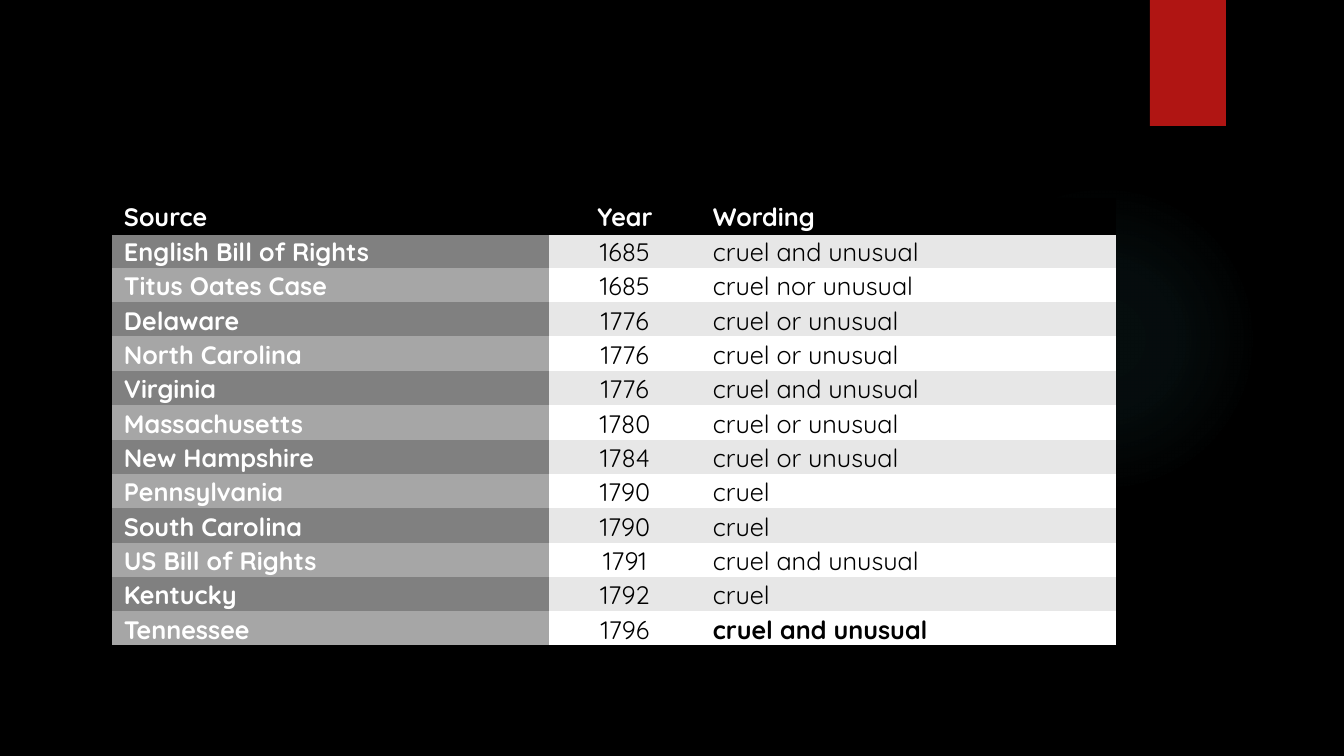
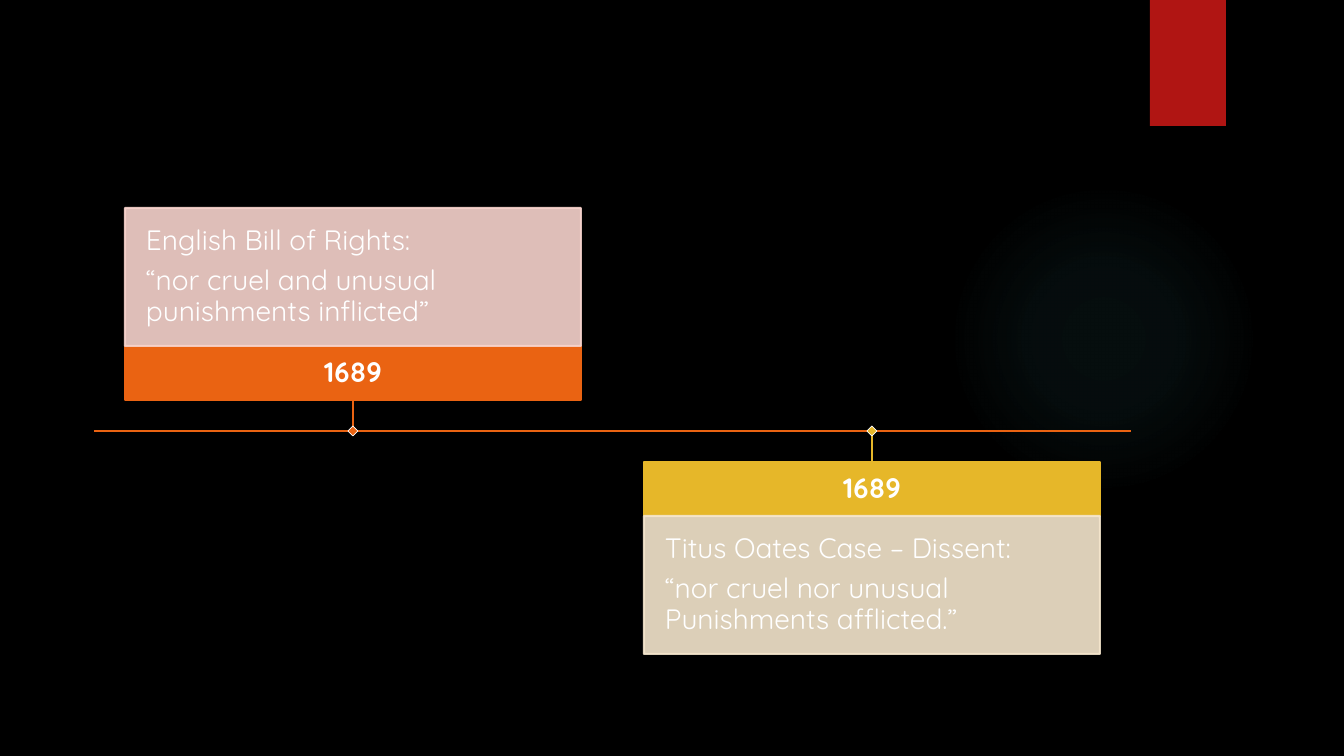
"""Build two slides on the wording of early punishment clauses."""
import dataclasses

import lxml.etree
import pptx
import pptx.dml.color
import pptx.enum.shapes
import pptx.enum.text
import pptx.oxml.ns
import pptx.util

SHAPE = pptx.enum.shapes.MSO_SHAPE
ANCHOR = pptx.enum.text.MSO_ANCHOR
ALIGN = pptx.enum.text.PP_ALIGN
SubElement = lxml.etree.SubElement
qn = pptx.oxml.ns.qn


@dataclasses.dataclass(frozen=True)
class Theme:
    font: str = "Quicksand"
    table_size: int = 18
    timeline_size: int = 20
    black: str = "000000"
    white: str = "FFFFFF"
    ribbon: str = "B01513"
    glow: str = "50B9C1"
    orange: str = "EA6312"
    orange_tint: str = "F7D3CC"
    gold: str = "E6B729"
    gold_tint: str = "F5E6CD"
    source_fills: tuple = ("808080", "A6A6A6")
    detail_fills: tuple = ("E7E7E7", "FFFFFF")


THEME = Theme()
SLIDE_SIZE = (1344, 756)
EMU_PER_PX = 12192000 / SLIDE_SIZE[0]
PLAIN_TABLE_STYLE = "{2D5ABB26-0587-4C30-8999-92F81FD0307C}"

GLOW_BOX = (949, 184, 310, 310)
GLOW_STOPS = [(0, 7), (36, 6), (69, 0)]
RIBBON_BOX = (1150, 0, 76, 126)

CLAUSE_BOX = (112, 199, 1004, 447)
CLAUSE_COLUMNS = (437, 152, 415)
CLAUSES = [
    ("Source", "Year", "Wording"),
    ("English Bill of Rights", "1685", "cruel and unusual"),
    ("Titus Oates Case", "1685", "cruel nor unusual"),
    ("Delaware", "1776", "cruel or unusual"),
    ("North Carolina", "1776", "cruel or unusual"),
    ("Virginia", "1776", "cruel and unusual"),
    ("Massachusetts", "1780", "cruel or unusual"),
    ("New Hampshire", "1784", "cruel or unusual"),
    ("Pennsylvania", "1790", "cruel"),
    ("South Carolina", "1790", "cruel"),
    ("US Bill of Rights", "1791", "cruel and unusual"),
    ("Kentucky", "1792", "cruel"),
    ("Tennessee", "1796", "cruel and unusual"),
]

AXIS_LEFT, AXIS_RIGHT, AXIS_Y = 94, 1131, 431
EVENT_WIDTH, YEAR_HEIGHT, QUOTE_HEIGHT = 456, 54, 138
STEM_HEIGHT, MARKER_SIZE = 31, 10
EVENTS = [
    dict(center=353, above=True, year="1689", color=THEME.orange, tint=THEME.orange_tint,
         quote="English Bill of Rights:\n“nor cruel and unusual punishments inflicted”"),
    dict(center=872, above=False, year="1689", color=THEME.gold, tint=THEME.gold_tint,
         quote="Titus Oates Case – Dissent:\n“nor cruel nor unusual Punishments afflicted.”"),
]


def px(length):
    return pptx.util.Emu(round(length * EMU_PER_PX))


def paint(fill, color):
    fill.solid()
    fill.fore_color.rgb = pptx.dml.color.RGBColor.from_string(color)


def stroke(line, color, width):
    paint(line.fill, color)
    line.width = pptx.util.Pt(width)


def add_block(slide, kind, box, fill, outline=None, width=1.5):
    block = slide.shapes.add_shape(kind, *map(px, box))
    block.shadow.inherit = False
    paint(block.fill, fill)
    if outline:
        stroke(block.line, outline, width)
    else:
        block.line.fill.background()
    return block


def add_line(slide, start, end, color, width):
    line = slide.shapes.add_connector(
        pptx.enum.shapes.MSO_CONNECTOR.STRAIGHT, *map(px, start + end))
    stroke(line.line, color, width)
    SubElement(line.element.spPr, qn("a:effectLst"))
    return line


def style_text(frame, size, color, bold, align, line_spacing, space_after=0):
    for paragraph in frame.paragraphs:
        paragraph.alignment = align
        paragraph.line_spacing = line_spacing
        paragraph.space_after = pptx.util.Pt(space_after)
        for run in paragraph.runs:
            run.font.name = THEME.font
            run.font.size = pptx.util.Pt(size)
            run.font.bold = bold
            run.font.color.rgb = pptx.dml.color.RGBColor.from_string(color)


def write_event(block, text, inset, bold, align):
    frame = block.text_frame
    frame.text = text
    frame.word_wrap = True
    frame.vertical_anchor = ANCHOR.MIDDLE
    frame.margin_left = frame.margin_right = px(inset)
    frame.margin_top = frame.margin_bottom = px(inset)
    style_text(frame, THEME.timeline_size, THEME.white, bold, align, 0.9, 7)


def make_translucent(block, percent):
    for color in block.element.iter(qn("a:srgbClr")):
        SubElement(color, qn("a:alpha"), val=str(percent * 1000))


def fill_glow(glow):
    glow.fill.gradient()
    gradient = next(glow.element.iter(qn("a:gradFill")))
    gradient.clear()
    stops = SubElement(gradient, qn("a:gsLst"))
    for position, opacity in GLOW_STOPS:
        stop = SubElement(stops, qn("a:gs"), pos=str(position * 1000))
        color = SubElement(stop, qn("a:srgbClr"), val=THEME.glow)
        SubElement(color, qn("a:alpha"), val=str(opacity * 1000))
    circle = SubElement(gradient, qn("a:path"), path="circle")
    SubElement(circle, qn("a:fillToRect"), l="50000", t="50000", r="50000", b="50000")


def decorate_layout(layout, slide):
    paint(layout.background.fill, THEME.black)
    glow = add_block(slide, SHAPE.OVAL, GLOW_BOX, THEME.glow)
    fill_glow(glow)
    ribbon = add_block(slide, SHAPE.RECTANGLE, RIBBON_BOX, THEME.ribbon)
    for decoration in (glow, ribbon):
        layout.shapes.element.append(decoration.element)


def add_rules(cell, sides):
    properties = cell.fill and next(cell.text_frame._txBody.getparent().iter(qn("a:tcPr")))
    for index, side in enumerate(sides):
        rule = lxml.etree.Element(qn(f"a:ln{side}"), w=str(pptx.util.Pt(2)))
        color = SubElement(rule, qn("a:solidFill"))
        SubElement(color, qn("a:srgbClr"), val=THEME.black)
        properties.insert(index, rule)


def format_clause(cell, text, row, column):
    is_header, is_last = row == 0, row == len(CLAUSES) - 1
    is_source = column == 0
    fills = THEME.source_fills if is_source else THEME.detail_fills
    cell.text = text
    cell.vertical_anchor = ANCHOR.BOTTOM
    cell.margin_left = cell.margin_right = px(12)
    cell.margin_top = cell.margin_bottom = 0
    paint(cell.fill, THEME.black if is_header else fills[(row - 1) % 2])
    style_text(
        cell.text_frame, THEME.table_size,
        THEME.white if is_header or is_source else THEME.black,
        is_header or is_source or (is_last and column == 2),
        ALIGN.CENTER if column == 1 else ALIGN.LEFT, 1.07)
    if is_header or is_last:
        add_rules(cell, "TB" if is_header else "B")


def build_clauses(slide):
    frame = slide.shapes.add_table(
        len(CLAUSES), len(CLAUSE_COLUMNS), *map(px, CLAUSE_BOX))
    next(frame.element.iter(qn("a:tableStyleId"))).text = PLAIN_TABLE_STYLE
    clauses = frame.table
    for column, width in zip(clauses.columns, CLAUSE_COLUMNS):
        column.width = px(width)
    for row, texts in enumerate(CLAUSES):
        clauses.rows[row].height = px(CLAUSE_BOX[3] / len(CLAUSES))
        for column, text in enumerate(texts):
            format_clause(clauses.cell(row, column), text, row, column)


def add_event(slide, center, above, year, color, tint, quote):
    left = center - EVENT_WIDTH // 2
    if above:
        year_top = AXIS_Y - STEM_HEIGHT - YEAR_HEIGHT
        quote_top = year_top - QUOTE_HEIGHT
    else:
        year_top = AXIS_Y + STEM_HEIGHT
        quote_top = year_top + YEAR_HEIGHT
    year_band = add_block(
        slide, SHAPE.RECTANGLE, (left, year_top, EVENT_WIDTH, YEAR_HEIGHT), color, color)
    write_event(year_band, year, 11, True, ALIGN.CENTER)
    quote_card = add_block(
        slide, SHAPE.RECTANGLE, (left, quote_top, EVENT_WIDTH, QUOTE_HEIGHT), tint, tint)
    make_translucent(quote_card, 90)
    write_event(quote_card, quote, 21, False, ALIGN.LEFT)
    stem = add_line(slide, (center, year_top), (center, AXIS_Y), color, 0.75)
    stem.begin_connect(year_band, 2 if above else 0)
    marker_box = (center - MARKER_SIZE / 2, AXIS_Y - MARKER_SIZE / 2, MARKER_SIZE, MARKER_SIZE)
    add_block(slide, SHAPE.DIAMOND, marker_box, color, THEME.white, 0.5)


def build_timeline(slide):
    add_line(slide, (AXIS_LEFT, AXIS_Y), (AXIS_RIGHT, AXIS_Y), THEME.orange, 1.5)
    for event in EVENTS:
        add_event(slide, **event)


def main():
    deck = pptx.Presentation()
    deck.slide_width, deck.slide_height = map(px, SLIDE_SIZE)
    layout = deck.slide_layouts[6]
    clause_slide, timeline_slide = (deck.slides.add_slide(layout) for _ in range(2))
    decorate_layout(layout, clause_slide)
    build_clauses(clause_slide)
    build_timeline(timeline_slide)
    deck.save("out.pptx")


if __name__ == "__main__":
    main()
